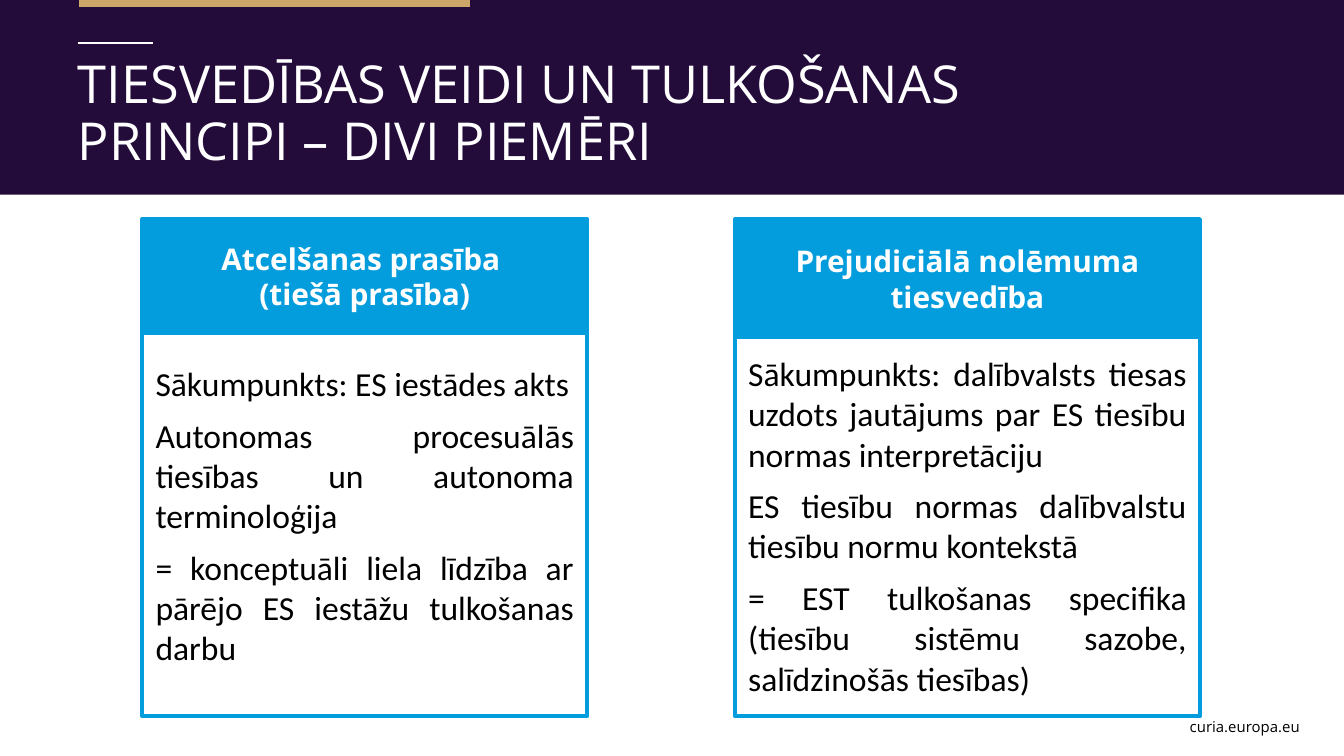
import pptx
import pptx.dml.color
import pptx.enum.shapes
import pptx.enum.text
import pptx.oxml
import pptx.util

Cm = pptx.util.Cm
Pt = pptx.util.Pt
RGBColor = pptx.dml.color.RGBColor
ALIGN = pptx.enum.text.PP_ALIGN
ANCHOR = pptx.enum.text.MSO_ANCHOR

PURPLE = RGBColor(0x23, 0x0B, 0x3A)
GOLD = RGBColor(0xCD, 0xA7, 0x69)
BLUE = RGBColor(0x03, 0x9C, 0xDC)
WHITE = RGBColor(0xFF, 0xFF, 0xFF)
BLACK = RGBColor(0, 0, 0)

HEADING_FONT = "Open Sans"
BODY_FONT = "Calibri"
CARD_TOP = 4.14
CARD_BOTTOM = 13.54


class SlideBuilder:
    """Holds the text styles and the slide being built."""

    styles = {
        "title": (dict(name=HEADING_FONT, size=Pt(28), bold=False), WHITE,
                  dict(alignment=ALIGN.LEFT, line_spacing=0.9)),
        "header": (dict(name=HEADING_FONT, size=Pt(16), bold=True), WHITE,
                   dict(alignment=ALIGN.CENTER)),
        "body": (dict(name=BODY_FONT, size=Pt(18), bold=False), BLACK,
                 dict(alignment=ALIGN.JUSTIFY, space_after=Pt(6))),
        "footer": (dict(name=HEADING_FONT, size=Pt(8), bold=False), BLACK,
                   dict(alignment=ALIGN.RIGHT)),
    }

    def __init__(self, presentation):
        self.slide = presentation.slides.add_slide(presentation.slide_layouts[5])
        self.shapes = self.slide.shapes

    def set_text(self, shape, lines, style, anchor):
        font_values, color, paragraph_values = self.styles[style]
        frame = shape.text_frame
        frame.word_wrap = True
        frame.auto_size = pptx.enum.text.MSO_AUTO_SIZE.NONE
        frame.vertical_anchor = anchor
        frame.text = "\n".join(lines)
        for paragraph in frame.paragraphs:
            for name, value in paragraph_values.items():
                setattr(paragraph, name, value)
            for run in paragraph.runs:
                for name, value in font_values.items():
                    setattr(run.font, name, value)
                run.font.color.rgb = color

    def rectangle(self, left, top, width, height, fill, outline=None):
        shape = self.shapes.add_shape(
            pptx.enum.shapes.MSO_SHAPE.RECTANGLE,
            Cm(left), Cm(top), Cm(width), Cm(height))
        shape.shadow.inherit = False
        shape.fill.solid()
        shape.fill.fore_color.rgb = fill
        if outline is None:
            shape.line.fill.background()
        else:
            shape.line.color.rgb = outline
            shape.line.width = Pt(2)
        return shape

    def rule(self, left, right, height, color, weight):
        line = self.shapes.add_connector(
            pptx.enum.shapes.MSO_CONNECTOR.STRAIGHT,
            Cm(left), Cm(height), Cm(right), Cm(height))
        line.line.color.rgb = color
        line.line.width = Pt(weight)
        line._element.spPr.append(pptx.oxml.parse_xml(
            '<a:effectLst xmlns:a='
            '"http://schemas.openxmlformats.org/drawingml/2006/main"/>'))

    def title(self, text, left, top, width, height):
        title = self.shapes.title
        values = dict(left=left, top=top, width=width, height=height)
        for name, value in values.items():
            setattr(title, name, Cm(value))
        self.set_text(title, [text], "title", ANCHOR.TOP)
        # Bring the title in front of the band
        self.shapes._spTree.append(title._element)

    def text_box(self, text, left, top, width, height):
        box = self.shapes.add_textbox(Cm(left), Cm(top), Cm(width), Cm(height))
        self.set_text(box, [text], "footer", ANCHOR.TOP)

    def card(self, left, width, header_height, body_top, header, body):
        body_box = self.rectangle(left, body_top, width,
                                  CARD_BOTTOM - body_top, WHITE, BLUE)
        self.set_text(body_box, body, "body", ANCHOR.MIDDLE)
        header_box = self.rectangle(left, CARD_TOP, width,
                                    header_height, BLUE, BLUE)
        self.set_text(header_box, header, "header", ANCHOR.MIDDLE)


def main():
    presentation = pptx.Presentation()
    presentation.slide_width = Cm(25.4)
    presentation.slide_height = Cm(14.29)
    builder = SlideBuilder(presentation)

    # Title band with its two rules
    builder.rectangle(0, 0, 25.4, 3.68, PURPLE)
    builder.rule(1.5, 8.89, 0.05, GOLD, 4.5)
    builder.rule(1.47, 2.9, 0.82, WHITE, 1)
    builder.title("TIESVEDĪBAS VEIDI UN TULKOŠANAS PRINCIPI – DIVI PIEMĒRI",
                  1.22, 0.98, 20.47, 2.59)

    # Footer
    builder.text_box("curia.europa.eu", 19.41, 13.44, 5.41, 0.58)

    # The two kinds of proceedings
    builder.card(2.69, 8.41, 2.16, 5.94,
                 ["Atcelšanas prasība ", "(tiešā prasība)"],
                 ["Sākumpunkts: ES iestādes akts",
                  "Autonomas procesuālās tiesības un autonoma terminoloģija",
                  "= konceptuāli liela līdzība ar pārējo ES iestāžu "
                  "tulkošanas darbu"])
    builder.card(13.89, 8.79, 2.24, 6.32,
                 ["Prejudiciālā nolēmuma tiesvedība"],
                 ["Sākumpunkts: dalībvalsts tiesas uzdots jautājums par "
                  "ES tiesību normas interpretāciju",
                  "ES tiesību normas dalībvalstu tiesību normu kontekstā",
                  "= EST tulkošanas specifika (tiesību sistēmu sazobe, "
                  "salīdzinošās tiesības)"])

    presentation.save("out.pptx")


if __name__ == "__main__":
    main()
